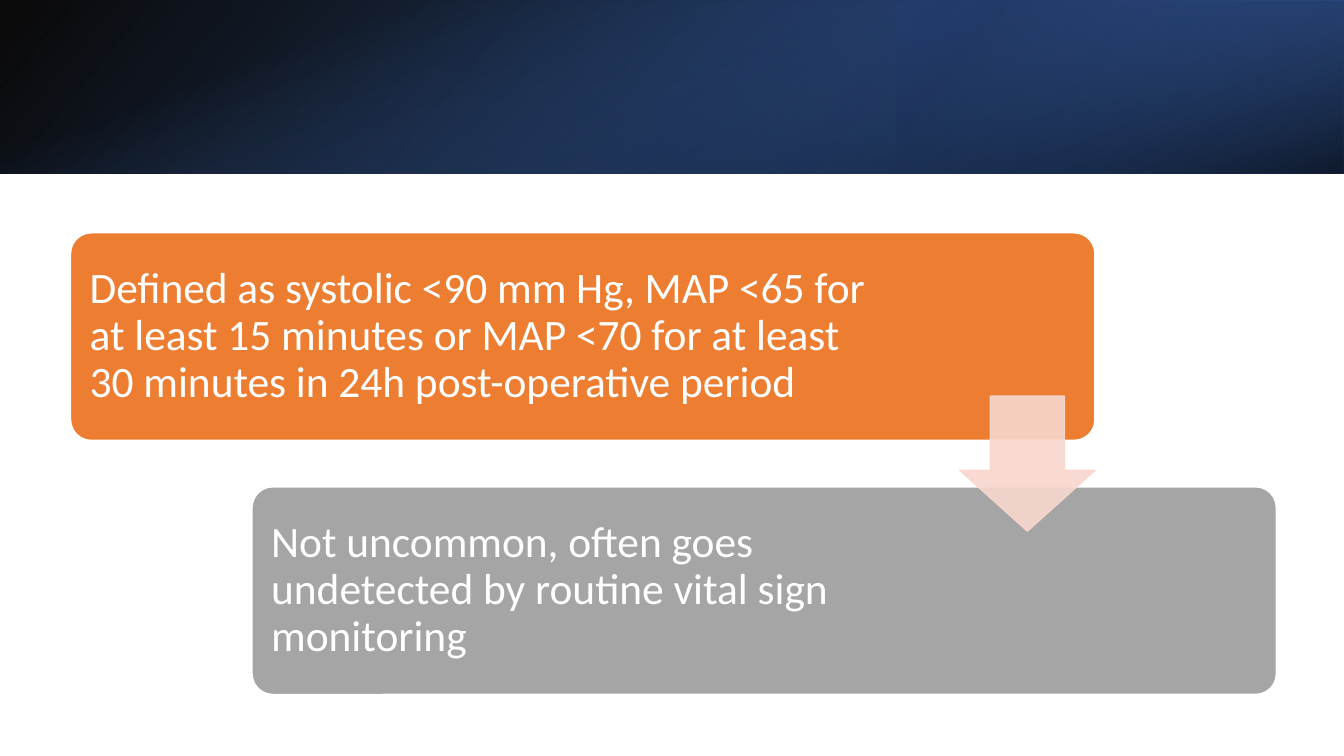
from lxml.etree import SubElement
from pptx import Presentation
from pptx.dml.color import RGBColor
from pptx.enum.shapes import MSO_SHAPE
from pptx.enum.text import MSO_ANCHOR, PP_ALIGN
from pptx.oxml import parse_xml
from pptx.oxml.ns import nsdecls, qn
from pptx.util import Inches, Pt


def color(text):
    return RGBColor.from_string(text)


def draw(kind, box, fill, line=None):
    shape = slide.shapes.add_shape(kind, *map(Inches, box))
    shape.shadow.inherit = False
    shape.fill.solid()
    shape.fill.fore_color.rgb = color(fill)
    if line:
        shape.line.color.rgb = color(line)
        shape.line.width = Pt(1)
    else:
        shape.line.fill.background()
    return shape


deck = Presentation()
deck.slide_width = Inches(13.33)
deck.slide_height = Inches(7.5)
slide = deck.slides.add_slide(deck.slide_layouts[6])

bands = [
    ((0, 0, 13.33, 1.72), 0, True, 140, [(0, "000000", 96), (100, "2F5597", 100)]),
    ((8.89, 0, 4.44, 1.72), 180, True, 320, [(19, "203864", 68), (100, "4472C4", 79)]),
    ((5.8, -5.8, 1.72, 13.33), 90, False, 340, [(23, "4472C4", 0), (99, "000000", 74)]),
]
for box, turn, flip, angle, stops in bands:
    band = draw(MSO_SHAPE.RECTANGLE, box, "000000")
    band.rotation = turn
    props = band.element.spPr
    if flip:
        props.find(qn("a:xfrm")).set("flipH", "1")
    marks = "".join(
        f'<a:gs pos="{pos * 1000}"><a:srgbClr val="{tone}">'
        f'<a:alpha val="{alpha * 1000}"/></a:srgbClr></a:gs>'
        for pos, tone, alpha in stops
    )
    grad = parse_xml(
        f'<a:gradFill {nsdecls("a")} rotWithShape="1"><a:gsLst>{marks}</a:gsLst>'
        f'<a:lin ang="{angle * 60000}" scaled="0"/></a:gradFill>'
    )
    props.replace(props.find(qn("a:solidFill")), grad)

cards = [
    (0.7, 2.31, 8.03, "ED7D31",
     "Defined as systolic <90 mm Hg, MAP <65 for at least 15 minutes "
     "or MAP <70 for at least 30 minutes in 24h post-operative period"),
    (2.5, 4.83, 6.9, "A5A5A5",
     "Not uncommon, often goes undetected by routine vital sign monitoring"),
]
for left, top, width, fill, text in cards:
    card = draw(MSO_SHAPE.ROUNDED_RECTANGLE, (left, top, 10.16, 2.06), fill, "FFFFFF")
    card.adjustments[0] = 0.1
    label = slide.shapes.add_textbox(
        Inches(left + 0.06), Inches(top + 0.06), Inches(width), Inches(1.94))
    frame = label.text_frame
    frame.word_wrap = True
    frame.vertical_anchor = MSO_ANCHOR.MIDDLE
    frame.margin_left = frame.margin_right = Inches(0.13)
    frame.margin_top = frame.margin_bottom = Inches(0.13)
    para = frame.paragraphs[0]
    para.text = text
    para.alignment = PP_ALIGN.LEFT
    para.line_spacing = 0.9
    para.font.size = Pt(31)
    para.font.name = "Calibri"
    para.font.color.rgb = color("FFFFFF")

arrow = draw(MSO_SHAPE.DOWN_ARROW, (9.52, 3.93, 1.34, 1.34), "F8D7CE", "F8D7CE")
arrow.adjustments[0] = 0.55
arrow.adjustments[1] = 0.45
for tone in arrow.element.spPr.iter(qn("a:srgbClr")):
    SubElement(tone, qn("a:alpha")).set("val", "90000")

deck.save("out.pptx")
